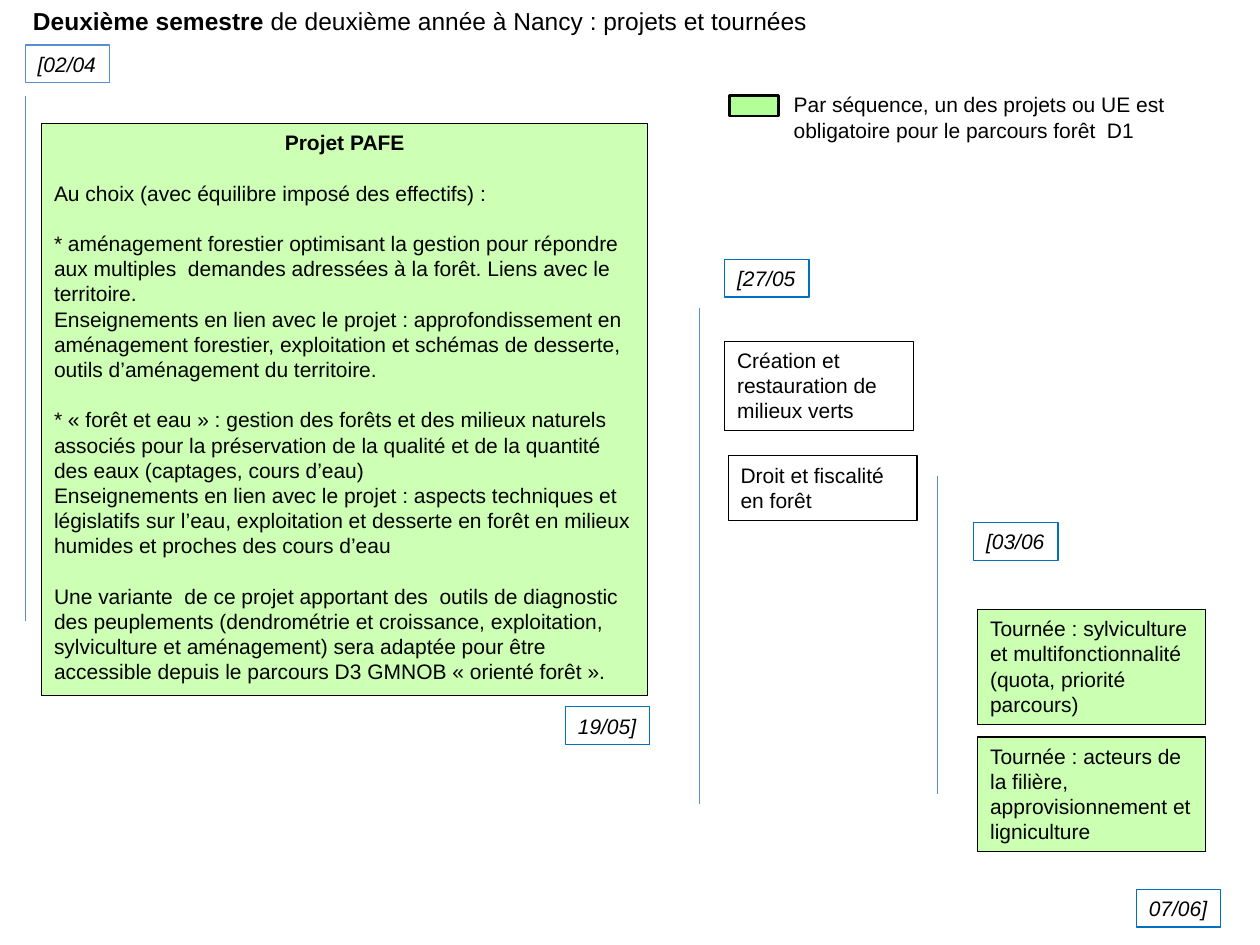
from dataclasses import dataclass
from typing import Optional

from lxml import etree
from pptx import Presentation
from pptx import util as u
from pptx.dml.color import RGBColor
from pptx.enum import shapes, text
from pptx.oxml.ns import qn


@dataclass(frozen=True)
class Theme:
    font: str = "Arial"
    ink: str = "000000"
    green: str = "99FF66"
    vivid: str = "66FF33"
    soft_blue: str = "558ED5"
    blue: str = "0070C0"
    title_size: int = 14
    body_size: int = 12
    gap: float = 14.4
    hairline: float = 0.75


T = Theme()


@dataclass(frozen=True)
class Para:
    words: str
    new_block: bool = False
    bold: bool = False
    italic: bool = False
    centred: bool = False


@dataclass(frozen=True)
class Box:
    left: float
    top: float
    width: float
    height: float
    paras: tuple = ()
    fill: Optional[str] = None
    alpha: int = 50
    line: Optional[str] = T.ink
    weight: float = T.hairline
    wrap: bool = True


@dataclass(frozen=True)
class Rule:
    x: float
    top: float
    bottom: float


def date_box(label: str, left: float, top: float, line: str = T.blue) -> Box:
    return Box(left, top, 1.7, 0.76, (Para(label, italic=True),), line=line, wrap=False)


def tour_box(top: float, *lines: str) -> Box:
    return Box(19.71, top, 4.6, 2.31, tuple(map(Para, lines)), T.green)


PROJECT = (
    Para("Projet PAFE", bold=True, centred=True),
    Para("Au choix (avec équilibre imposé des effectifs) :", True),
    Para("* aménagement forestier optimisant la gestion pour répondre aux multiples  demandes "
         "adressées à la forêt. Liens avec le territoire.", True),
    Para("Enseignements en lien avec le projet : approfondissement en aménagement forestier, "
         "exploitation et schémas de desserte, outils d’aménagement du territoire."),
    Para("* « forêt et eau » : gestion des forêts et des milieux naturels associés pour la "
         "préservation de la qualité et de la quantité des eaux (captages, cours d’eau)", True),
    Para("Enseignements en lien avec le projet : aspects techniques et législatifs sur l’eau, "
         "exploitation et desserte en forêt en milieux humides et proches des cours d’eau"),
    Para("Une variante  de ce projet apportant des  outils de diagnostic  des peuplements "
         "(dendrométrie et croissance, exploitation, sylviculture et aménagement) sera adaptée "
         "pour être accessible depuis le parcours D3 GMNOB « orienté forêt ».", True),
)

BOXES = (
    Box(15.75, 1.73, 9.65, 1.3, (Para("Par séquence, un des projets ou UE est obligatoire "
                                      "pour le parcours forêt  D1"),), line=None),
    Box(14.71, 1.93, 0.99, 0.41, fill=T.vivid, weight=1.5),
    Box(0.84, 2.49, 12.22, 11.53, PROJECT, T.green, 49),
    Box(14.61, 6.88, 3.81, 1.8, (Para("Création et restauration de milieux verts"),)),
    Box(14.68, 9.19, 3.81, 1.3, (Para("Droit et fiscalité en forêt"),)),
    tour_box(12.29, "Tournée : sylviculture et multifonctionnalité", "(quota, priorité parcours)"),
    tour_box(14.86, "Tournée : acteurs de la filière, approvisionnement et ligniculture"),
    date_box("[02/04", 0.51, 0.91, T.soft_blue),
    date_box("19/05]", 11.4, 14.25),
    date_box("[27/05", 14.61, 5.23),
    date_box("[03/06", 19.63, 10.54),
    date_box("07/06]", 22.91, 17.93),
)

RULES = (Rule(0.51, 1.93, 12.52), Rule(14.1, 6.2, 16.21), Rule(18.9, 9.6, 16))


def set_attrs(target, values: dict) -> None:
    for name, value in values.items():
        setattr(target, name, value)


def add_run(p, words: str, size: int, bold: bool = False, italic: bool = False) -> None:
    r = p.add_run()
    r.text = words
    set_attrs(r.font, dict(name=T.font, size=u.Pt(size), bold=bold, italic=italic))
    r.font.color.rgb = RGBColor.from_string(T.ink)


def set_frame(tf, wrap: bool) -> None:
    set_attrs(tf, dict(word_wrap=wrap, vertical_anchor=text.MSO_ANCHOR.TOP,
                       auto_size=text.MSO_AUTO_SIZE.NONE))


def fill_shape(sp, colour: str, alpha: int) -> None:
    sp.fill.solid()
    sp.fill.fore_color.rgb = RGBColor.from_string(colour)
    clr = sp.fill._xPr.find(".//" + qn("a:srgbClr"))
    etree.SubElement(clr, qn("a:alpha")).set("val", str(alpha * 1000))


def stroke(sp, colour: str, weight: float) -> None:
    sp.line.color.rgb = RGBColor.from_string(colour)
    sp.line.width = u.Pt(weight)


def draw_box(s, box: Box) -> None:
    area = [u.Cm(v) for v in (box.left, box.top, box.width, box.height)]
    if box.line:
        sp = s.shapes.add_shape(shapes.MSO_SHAPE.RECTANGLE, *area)
        sp.shadow.inherit = False
        stroke(sp, box.line, box.weight)
        if box.fill:
            fill_shape(sp, box.fill, box.alpha)
        else:
            sp.fill.background()
    else:
        sp = s.shapes.add_textbox(*area)
    tf = sp.text_frame
    set_frame(tf, box.wrap)
    for i, para in enumerate(box.paras):
        p = tf.add_paragraph() if i else tf.paragraphs[0]
        p.alignment = text.PP_ALIGN.CENTER if para.centred else text.PP_ALIGN.LEFT
        if para.new_block:
            p.space_before = u.Pt(T.gap)
        add_run(p, para.words, T.body_size, para.bold, para.italic)


def draw_rule(s, rule: Rule) -> None:
    x = u.Cm(rule.x)
    c = s.shapes.add_connector(shapes.MSO_CONNECTOR.STRAIGHT,
                               x, u.Cm(rule.top), x, u.Cm(rule.bottom))
    stroke(c, T.soft_blue, T.hairline)
    etree.SubElement(c._element.spPr, qn("a:effectLst"))


def draw_title(s) -> None:
    sp = s.shapes.title
    set_attrs(sp, dict(left=u.Cm(0.41), top=u.Cm(0), width=u.Cm(16.18), height=u.Cm(0.86)))
    set_frame(sp.text_frame, False)
    p = sp.text_frame.paragraphs[0]
    p.alignment = text.PP_ALIGN.LEFT
    add_run(p, "Deuxième semestre ", T.title_size, bold=True)
    add_run(p, "de deuxième année à Nancy : projets et tournées", T.title_size)


def main() -> None:
    prs = Presentation()
    set_attrs(prs, dict(slide_width=u.Cm(25.4), slide_height=u.Cm(19.05)))
    s = prs.slides.add_slide(prs.slide_layouts[5])
    draw_title(s)
    for box in BOXES:
        draw_box(s, box)
    for rule in RULES:
        draw_rule(s, rule)
    prs.save("out.pptx")


if __name__ == "__main__":
    main()
